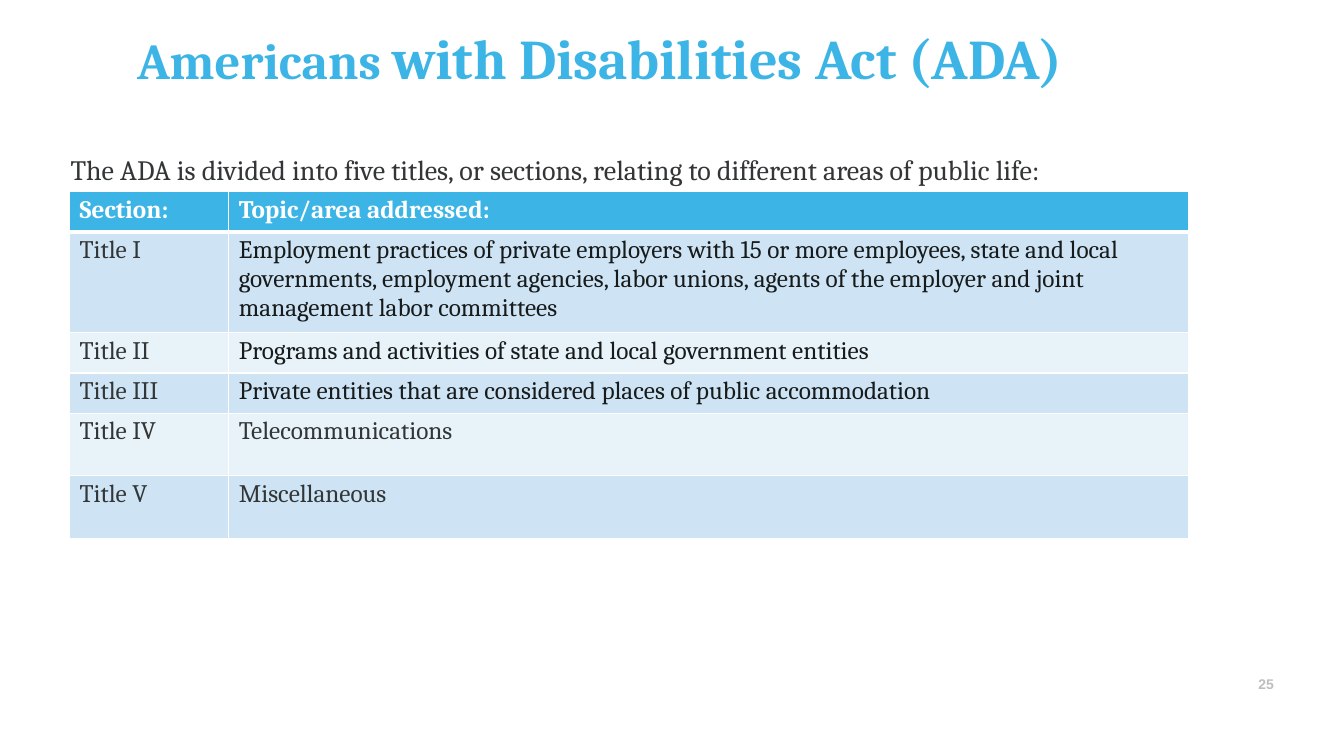
from dataclasses import dataclass

from lxml.etree import SubElement
from pptx import Presentation
from pptx.dml.color import RGBColor
from pptx.enum.text import MSO_ANCHOR as Anchor, MSO_AUTO_SIZE as AutoSize, PP_ALIGN as Align
from pptx.oxml.ns import qn
from pptx.util import Inches, Pt


@dataclass(frozen=True)
class Theme:
    """Colours, fonts and type sizes of the slide."""
    accent: str = "3CB5E6"
    white: str = "FFFFFF"
    bands: tuple = ("CEE4F5", "E8F3F9")
    text: str = "333637"
    dark: str = "181B1B"
    muted: str = "BEBEBE"
    serif: str = "Cambria"
    sans: str = "Arial"
    title_small: int = 36
    title: int = 40
    lead: int = 20
    cell: int = 18
    number: int = 10


THEME = Theme()
COLUMNS = (1.58, 9.52)
ROWS = (
    (0.4, "Section:", "Topic/area addressed:", THEME.white),
    (1.0, "Title I", "Employment practices of private employers with 15 or more employees, "
     "state and local governments, employment agencies, labor unions, agents of the employer "
     "and joint management labor committees", THEME.dark),
    (0.4, "Title II", "Programs and activities of state and local government entities", THEME.dark),
    (0.4, "Title III", "Private entities that are considered places of public accommodation",
     THEME.dark),
    (0.62, "Title IV", "Telecommunications", THEME.text),
    (0.62, "Title V", "Miscellaneous", THEME.text),
)


def add_run(p, text, size, color, bold=False, font=THEME.serif):
    """Append one formatted run to a paragraph."""
    r = p.add_run()
    r.text = text
    r.font.name = font
    r.font.size = Pt(size)
    r.font.bold = bold
    r.font.color.rgb = RGBColor.from_string(color)


def set_frame(sp, left, top, width, height, inset_left=0.01, inset_top=0.01):
    """Place a text shape and return its first paragraph."""
    sp.left, sp.top, sp.width, sp.height = map(Inches, (left, top, width, height))
    tf = sp.text_frame
    tf.word_wrap = True
    tf.auto_size = AutoSize.NONE
    tf.vertical_anchor = Anchor.TOP
    tf.margin_left, tf.margin_top = Inches(inset_left), Inches(inset_top)
    tf.margin_right = tf.margin_bottom = 0
    p = tf.paragraphs[0]
    p.alignment = Align.LEFT
    return p


def add_label(s, box, text, *style, **insets):
    """Add a text box holding a single run."""
    p = set_frame(s.shapes.add_textbox(0, 0, 0, 0), *box, **insets)
    add_run(p, text, *style)


def add_title(s):
    """Fill the title placeholder."""
    p = set_frame(s.shapes.title, 1.35, 0.22, 10.62, 0.69)
    add_run(p, "Americans ", THEME.title_small, THEME.accent, True)
    add_run(p, "with Disabilities Act (ADA)", THEME.title, THEME.accent, True)


def set_borders(cell, top, bottom):
    """Draw white borders of the given point widths around a cell."""
    tc_pr = cell._tc.get_or_add_tcPr()
    for side, width in (("L", 1), ("R", 1), ("T", top), ("B", bottom)):
        ln = SubElement(tc_pr, qn(f"a:ln{side}"), w=str(Pt(width)))
        SubElement(SubElement(ln, qn("a:solidFill")), qn("a:srgbClr"), val=THEME.white)


def fill_cell(cell, text, color, row):
    """Write and format one table cell."""
    set_borders(cell, 3 if row == 1 else 1, 3 if row == 0 else 1)
    cell.fill.solid()
    fill = THEME.bands[(row - 1) % 2] if row else THEME.accent
    cell.fill.fore_color.rgb = RGBColor.from_string(fill)
    cell.margin_left, cell.margin_top = Inches(0.1), Inches(0.04)
    cell.margin_right = cell.margin_bottom = 0
    add_run(cell.text_frame.paragraphs[0], text, THEME.cell, color, row == 0)


def add_sections_table(s):
    """Add the table of the five titles of the act."""
    height = sum(row[0] for row in ROWS)
    frame = s.shapes.add_table(len(ROWS), len(COLUMNS), Inches(0.69), Inches(1.9),
                               Inches(sum(COLUMNS)), Inches(height))
    table = frame.table
    for column, width in zip(table.columns, COLUMNS):
        column.width = Inches(width)
    for i, (row_height, section, topic, color) in enumerate(ROWS):
        table.rows[i].height = Inches(row_height)
        fill_cell(table.cell(i, 0), section, THEME.text if i else THEME.white, i)
        fill_cell(table.cell(i, 1), topic, color, i)


def main():
    """Build and save the slide."""
    prs = Presentation()
    prs.slide_width, prs.slide_height = Inches(13.33), Inches(7.5)
    s = prs.slides.add_slide(prs.slide_layouts[5])
    add_title(s)
    add_label(s, (12.44, 6.7, 0.25, 0.18), "25", THEME.number, THEME.muted, True, THEME.sans,
              inset_left=0.04, inset_top=0)
    add_sections_table(s)
    add_label(s, (0.69, 1.5, 10.53, 0.36),
              "The ADA is divided into five titles, or sections, "
              "relating to different areas of public life:", THEME.lead, THEME.text)
    prs.save("out.pptx")


if __name__ == "__main__":
    main()
